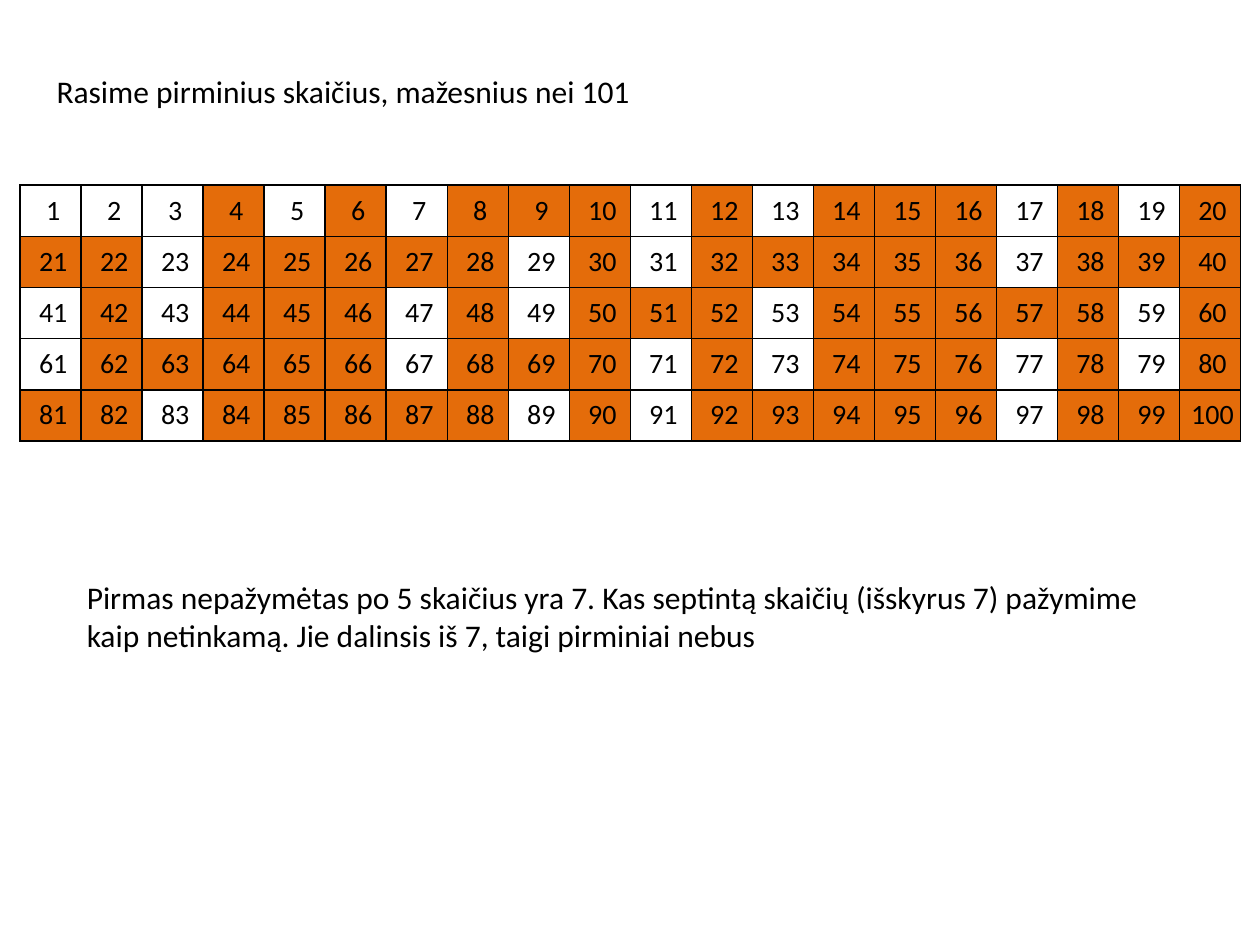
from lxml.etree import SubElement as Sub
from pptx import Presentation
from pptx.dml.color import RGBColor as Color
from pptx.enum.text import MSO_ANCHOR as Anchor, MSO_AUTO_SIZE as Auto, PP_ALIGN as Align
from pptx.oxml.ns import qn
from pptx.util import Inches, Pt

COLS, ROWS = 20, 5
SIEVE = (2, 3, 5)


def paint(code):
    return Color.from_string(code)


def struck(num):
    return any(num > p and num % p == 0 for p in SIEVE)


class Page:
    font = "Calibri"
    ink = "000000"
    plain = "FFFFFF"
    mark = "E46C0A"

    def __init__(self, deck):
        self.slide = deck.slides.add_slide(deck.slide_layouts[6])
        self.unit_x = deck.slide_width / 100
        self.unit_y = deck.slide_height / 75

    def area(self, x, y, w, h):
        ux, uy = self.unit_x, self.unit_y
        return [round(v) for v in (x * ux, y * uy, w * ux, h * uy)]

    def put(self, para, text, size):
        run = para.add_run()
        run.text = text
        run.font.name = self.font
        run.font.size = Pt(size)
        run.font.color.rgb = paint(self.ink)

    def note(self, text, *place):
        frame = self.slide.shapes.add_textbox(*self.area(*place)).text_frame
        frame.word_wrap = True
        frame.auto_size = Auto.SHAPE_TO_FIT_TEXT
        self.put(frame.paragraphs[0], text, 18)

    def edge(self, cell):
        props = cell._tc.get_or_add_tcPr()
        for side in ("lnL", "lnR", "lnT", "lnB"):
            line = Sub(props, qn(f"a:{side}"), w=str(Pt(1)))
            fill = Sub(line, qn("a:solidFill"))
            Sub(fill, qn("a:srgbClr"), val=self.ink)

    def cell(self, cell, num):
        cell.margin_left, cell.margin_right = Inches(0.08), Inches(0.04)
        cell.margin_top = cell.margin_bottom = Inches(0.05)
        cell.vertical_anchor = Anchor.MIDDLE
        self.edge(cell)
        cell.fill.solid()
        cell.fill.fore_color.rgb = paint(self.mark if struck(num) else self.plain)
        para = cell.text_frame.paragraphs[0]
        para.alignment = Align.CENTER
        self.put(para, str(num), 16)

    def grid(self, *place):
        box = self.area(*place)
        table = self.slide.shapes.add_table(ROWS, COLS, *box).table
        table.first_row = table.horz_banding = False
        for num, cell in enumerate(table.iter_cells(), 1):
            self.cell(cell, num)


def main():
    deck = Presentation()
    deck.slide_width, deck.slide_height = Inches(10), Inches(7.5)
    page = Page(deck)
    page.grid(1.6, 14.7, 96.9, 20.3)
    page.note("Rasime pirminius skaičius, mažesnius nei 101", 3.5, 5.2, 92.9, 4)
    page.note(
        "Pirmas nepažymėtas po 5 skaičius yra 7. Kas septintą skaičių "
        "(išskyrus 7) pažymime kaip netinkamą. Jie dalinsis iš 7, "
        "taigi pirminiai nebus",
        5.9, 45.4, 89.8, 7.1,
    )
    deck.save("out.pptx")


if __name__ == "__main__":
    main()
